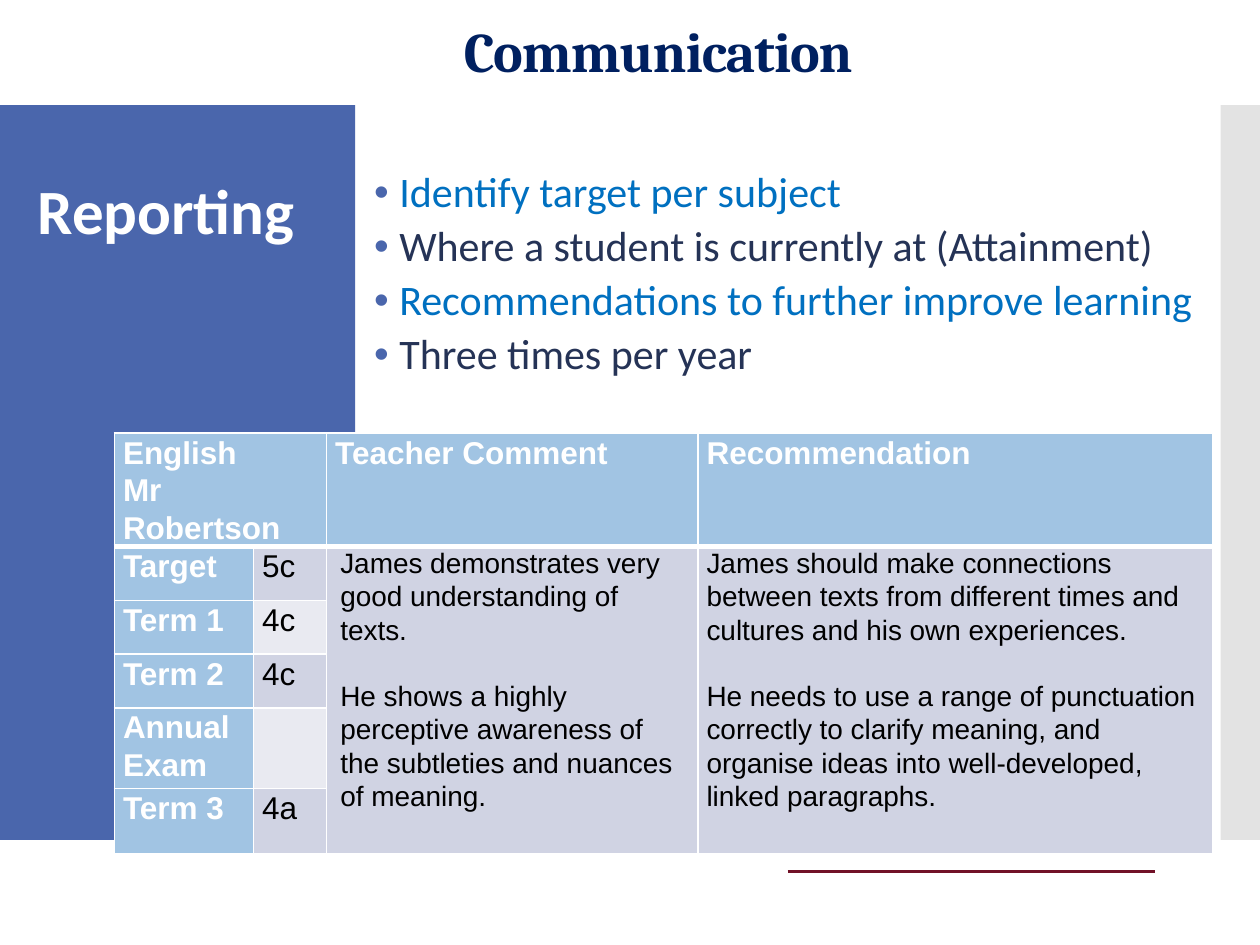
"""Build the Communication slide on reporting, with a sample subject report table."""
from lxml.etree import SubElement
from pptx import Presentation
from pptx.dml.color import RGBColor
from pptx.enum.shapes import MSO_CONNECTOR as Connector, MSO_SHAPE as Shape
from pptx.enum.text import MSO_ANCHOR as Anchor, MSO_AUTO_SIZE as AutoSize, PP_ALIGN as Align
from pptx.oxml import parse_xml
from pptx.oxml.ns import nsdecls, qn
from pptx.util import Pt

COLORS = {
    "panel": "4A66AC", "strip": "C8C8C8", "rule": "711127", "title": "002060",
    "bright": "0070C0", "dark": "253356", "header": "A1C4E3", "band": "D0D3E3",
    "light": "E9EAF1", "white": "FFFFFF", "black": "000000",
}


def style(paragraph, name, size, color, bold=False, spacing=None):
    paragraph.font.name = name
    paragraph.font.size = Pt(size)
    paragraph.font.bold = bold
    paragraph.font.color.rgb = RGBColor.from_string(COLORS[color])
    paragraph.alignment = Align.LEFT
    paragraph.line_spacing = spacing


def fill_cell(cell, lines, fill, size=18, color="white", bold=True, top=1, bottom=1):
    cell.margin_left = cell.margin_right = Pt(5)
    cell.margin_top = cell.margin_bottom = 0
    cell.fill.solid()
    cell.fill.fore_color.rgb = RGBColor.from_string(COLORS[fill])
    cell.text = "\n".join(lines)
    for paragraph in cell.text_frame.paragraphs:
        style(paragraph, "Arial", size, color, bold, 1.07)
    properties = cell._tc.get_or_add_tcPr()
    for index, (side, width) in enumerate({"L": 1, "R": 1, "T": top, "B": bottom}.items()):
        properties.insert(index, parse_xml(
            f'<a:ln{side} {nsdecls("a")} w="{Pt(width)}"><a:solidFill>'
            f'<a:srgbClr val="{COLORS["white"]}"/></a:solidFill></a:ln{side}>'))


deck = Presentation()
deck.slide_width, deck.slide_height = Pt(720), Pt(540)
page = deck.slides.add_slide(deck.slide_layouts[1])
title, body = page.placeholders

for left, width, color in [(0, 203, "panel"), (697.5, 22.5, "strip")]:
    block = page.shapes.add_shape(Shape.RECTANGLE, Pt(left), Pt(60), Pt(width), Pt(420))
    block.shadow.inherit = False
    block.fill.solid()
    block.fill.fore_color.rgb = RGBColor.from_string(COLORS[color])
    block.line.fill.background()
    if color == "strip":
        SubElement(block._element.spPr.find(".//" + qn("a:srgbClr")), qn("a:alpha"), val="50000")

rule = page.shapes.add_connector(Connector.STRAIGHT, Pt(450), Pt(498), Pt(660), Pt(498))
rule.line.color.rgb = RGBColor.from_string(COLORS["rule"])
rule.line.width = Pt(1.25)
SubElement(rule._element.spPr, qn("a:effectLst"))

for holder, (left, top, width, height) in [
    (title, (257.8, 10, 249, 42.5)),
    (body, (167, 54, 526.5, 206.5)),
]:
    page.shapes._spTree.append(holder._element)
    holder.left, holder.top, holder.width, holder.height = Pt(left), Pt(top), Pt(width), Pt(height)
    holder.text_frame.vertical_anchor = Anchor.MIDDLE
    holder.text_frame.auto_size = AutoSize.NONE

title.text_frame.text = "Communication"
heading = title.text_frame.paragraphs[0]
style(heading, "Cambria", 32, "title", True, 0.9)
heading.runs[0].font._element.set("spc", "-60")

points = [
    "Identify target per subject",
    "Where a student is currently at (Attainment)",
    "Recommendations to further improve learning",
    "Three times per year",
]
body.text_frame.text = "\n".join(points)
for index, paragraph in enumerate(body.text_frame.paragraphs):
    paragraph.level = 1
    style(paragraph, "Calibri", 24, "dark" if index % 2 else "bright", spacing=0.9)
    paragraph.space_before = paragraph.space_after = Pt(2.5)
    properties = paragraph._p.get_or_add_pPr()
    properties.set("marL", str(Pt(54)))
    properties.set("indent", str(Pt(-14.4)))
    for offset, markup in enumerate([
        f'<a:buClr {nsdecls("a")}><a:srgbClr val="{COLORS["panel"]}"/></a:buClr>',
        f'<a:buFont {nsdecls("a")} typeface="Arial"/>',
        f'<a:buChar {nsdecls("a")} char="•"/>',
    ]):
        properties.insert(3 + offset, parse_xml(markup))

frame = page.shapes.add_table(6, 4, Pt(65.3), Pt(247.5), Pt(628), Pt(240))
report = frame.table
for column, width in zip(report.columns, [79.5, 41.8, 212.2, 294.5]):
    column.width = Pt(width)
for row, height in zip(report.rows, [64.4, 31, 30.7, 30.7, 46, 37.2]):
    row.height = Pt(height)
report.cell(0, 0).merge(report.cell(0, 1))
for column in (2, 3):
    report.cell(1, column).merge(report.cell(5, column))

headers = [["English", "Mr Robertson"], [], ["Teacher Comment"], ["Recommendation"]]
for column, lines in enumerate(headers):
    fill_cell(report.cell(0, column), lines, "header", bottom=3)

grades = [("Target", "5c"), ("Term 1", "4c"), ("Term 2", "4c"), ("Annual Exam", ""), ("Term 3", "4a")]
for row, (label, grade) in enumerate(grades, 1):
    top = 3 if row == 1 else 1
    fill_cell(report.cell(row, 0), [label], "header", top=top)
    fill_cell(report.cell(row, 1), [grade], "band" if row % 2 else "light", color="black", bold=False, top=top)

remarks = [
    ["James demonstrates very good understanding of texts.",
     "He shows a highly perceptive awareness of the subtleties and nuances of meaning."],
    ["James should make connections between texts from different times and cultures and his own experiences.",
     "He needs to use a range of punctuation correctly to clarify meaning, and organise ideas into "
     "well-developed, linked paragraphs."],
]
for column, lines in enumerate(remarks, 2):
    cell = report.cell(1, column)
    fill_cell(cell, lines, "band", size=16, color="black", bold=False, top=3)
    cell.text_frame.paragraphs[1].space_before = Pt(19)
for paragraph in report.cell(1, 2).text_frame.paragraphs:
    paragraph._p.get_or_add_pPr().set("marL", str(Pt(2.9)))

label = page.shapes.add_textbox(Pt(14.4), Pt(94.3), Pt(180), Pt(51))
label.text_frame.word_wrap = True
label.text_frame.auto_size = AutoSize.SHAPE_TO_FIT_TEXT
label.text_frame.text = "Reporting"
style(label.text_frame.paragraphs[0], "Calibri", 36, "white", True)

deck.save("out.pptx")
